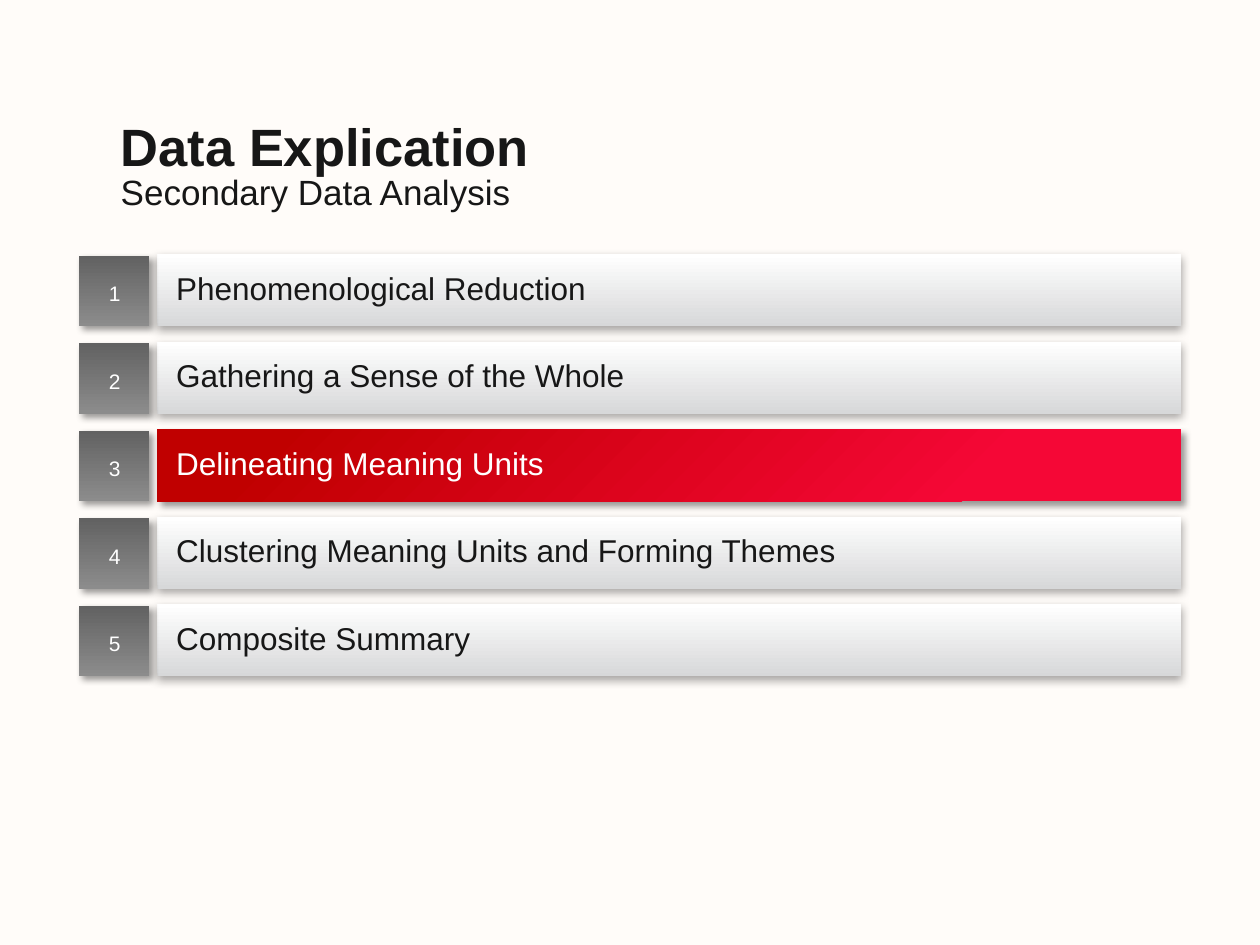
from pptx import Presentation
from pptx.dml.color import RGBColor
from pptx.enum.shapes import MSO_SHAPE as SHAPE
from pptx.enum.text import MSO_ANCHOR as ANCHOR, MSO_AUTO_SIZE as AUTO, PP_ALIGN as ALIGN
from pptx.oxml import parse_xml
from pptx.oxml.ns import nsdecls, qn
from pptx.util import Pt

INK = RGBColor(0x17, 0x17, 0x17)
WHITE = RGBColor(0xFF, 0xFF, 0xFF)
PAPER = RGBColor(0xFF, 0xFC, 0xF9)
SILVER = RGBColor(0xD7, 0xD8, 0xD9)
CRIMSON = RGBColor(0xF5, 0x07, 0x36)
DARK_RED = RGBColor(0xC0, 0x00, 0x00)
DARK_GREY = RGBColor(0x62, 0x62, 0x62)
MID_GREY = RGBColor(0x8C, 0x8C, 0x8C)

# gradient stops (percent, colour), gradient angle, shadow (alpha, blur, distance, angle)
DEEP_SHADOW = (40, 4, 3, 45)
PLAIN = ([(0, SILVER), (100, WHITE)], 270, (35, 5, 1.8, 90))
ACTIVE = ([(11, CRIMSON), (20, CRIMSON), (89, DARK_RED)], 225, DEEP_SHADOW)
TILE = ([(0, DARK_GREY), (100, MID_GREY)], 90, DEEP_SHADOW)

STEPS = [
    "Phenomenological Reduction",
    "Gathering a Sense of the Whole",
    "Delineating Meaning Units",
    "Clustering Meaning Units and Forming Themes",
    "Composite Summary",
]
ACTIVE_STEP = 3
PITCH = 50


def add_panel(shapes, x, y, w, h, style):
    """Add a borderless rectangle with a gradient and an outer shadow."""
    stops, angle, (alpha, blur, dist, direction) = style
    sp = shapes.add_shape(SHAPE.RECTANGLE, Pt(x), Pt(y), Pt(w), Pt(h))
    stops_xml = "".join(
        f'<a:gs pos="{pos * 1000}"><a:srgbClr val="{color}"/></a:gs>' for pos, color in stops)
    sp._element.spPr.append(parse_xml(
        f'<a:gradFill {nsdecls("a")} rotWithShape="1"><a:gsLst>{stops_xml}</a:gsLst>'
        f'<a:lin ang="{angle * 60000}" scaled="0"/></a:gradFill>'))
    sp.line.fill.background()
    sp.shadow.inherit = False
    sp._element.spPr.find(qn("a:effectLst")).append(parse_xml(
        f'<a:outerShdw {nsdecls("a")} blurRad="{Pt(blur)}" dist="{Pt(dist)}" '
        f'dir="{direction * 60000}" algn="ctr" rotWithShape="0">'
        f'<a:srgbClr val="000000"><a:alpha val="{alpha * 1000}"/></a:srgbClr></a:outerShdw>'))


def write(sp, box, text, size, color, bold=False, align=ALIGN.LEFT, anchor=ANCHOR.TOP, margins=None):
    """Place a text shape and fill it with one formatted line."""
    for name, value in zip(("left", "top", "width", "height"), box):
        setattr(sp, name, Pt(value))
    tf = sp.text_frame
    frame = {"word_wrap": True, "auto_size": AUTO.NONE, "vertical_anchor": anchor}
    for name, value in {**frame, **(margins or {})}.items():
        setattr(tf, name, value)
    p = tf.paragraphs[0]
    p.alignment = align
    r = p.add_run()
    r.text = text
    for name, value in {"name": "Arial", "size": Pt(size), "bold": bold}.items():
        setattr(r.font, name, value)
    r.font.color.rgb = color
    return p


prs = Presentation()
prs.slide_width, prs.slide_height = Pt(720), Pt(540)
s = prs.slides.add_slide(prs.slide_layouts[5])
s.background.fill.solid()
s.background.fill.fore_color.rgb = PAPER

# Headings
no_sides = {"margin_left": 0, "margin_right": 0}
no_margins = {**no_sides, "margin_top": 0, "margin_bottom": 0}
p = write(s.shapes.title, (69, 61.2, 254, 47.5), "Data Explication", 30, INK,
          bold=True, anchor=ANCHOR.MIDDLE, margins=no_sides)
p.line_spacing = 0.95
subtitle = s.shapes.add_textbox(0, 0, 0, 0)
write(subtitle, (69, 95.5, 382, 28), "Secondary Data Analysis", 20, INK,
      anchor=ANCHOR.MIDDLE, margins=no_margins)

# Step bars
for i, step in enumerate(STEPS):
    active = i + 1 == ACTIVE_STEP
    add_panel(s.shapes, 90, 145.4 + i * PITCH, 585, 41.2, ACTIVE if active else PLAIN)
    label = s.shapes.add_textbox(0, 0, 0, 0)
    write(label, (93.6, 150 + i * PITCH, 581, 28.8), step, 18, WHITE if active else INK)

# Numbered tiles
tiles = s.shapes.add_group_shape()
for i in range(len(STEPS)):
    add_panel(tiles.shapes, 45, 146.3 + i * PITCH, 40.2, 40.2, TILE)
    number = tiles.shapes.add_textbox(Pt(46.8), Pt(157 + i * PITCH), Pt(37.4), Pt(21.6))
    write(number, (46.8, 157 + i * PITCH, 37.4, 21.6), str(i + 1), 12, WHITE, align=ALIGN.CENTER)

prs.save("out.pptx")
